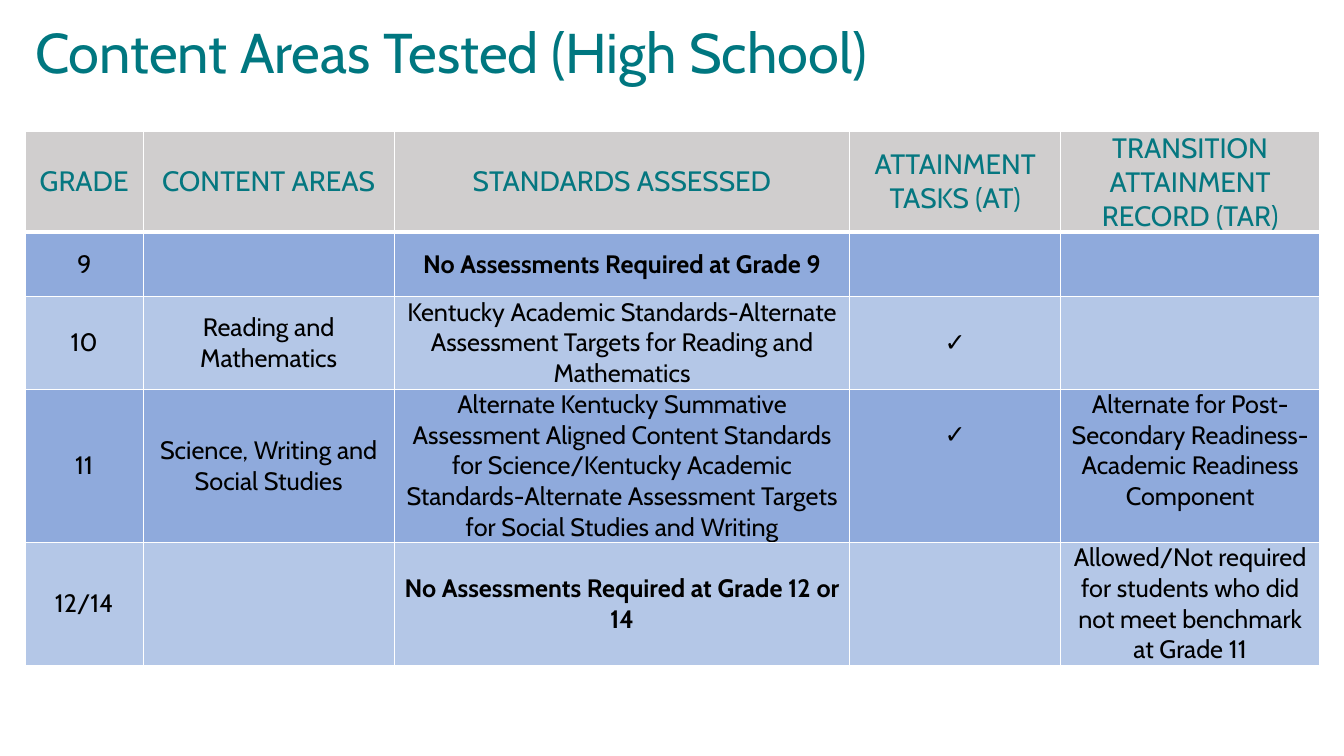
from dataclasses import dataclass

import pptx
import pptx.dml.color
import pptx.enum.text
import pptx.oxml
import pptx.oxml.ns
import pptx.util
from pptx.util import Inches

Color = pptx.dml.color.RGBColor
Anchor = pptx.enum.text.MSO_ANCHOR
Align = pptx.enum.text.PP_ALIGN


@dataclass(frozen=True)
class Theme:
    font: str = "Cabin"
    title_color: str = "007780"
    header_color: str = "057780"
    body_color: str = "000000"
    header_fill: str = "D0CECE"
    band_fills: tuple[str, str] = ("8FAADC", "B4C7E7")
    border_color: str = "FFFFFF"
    title_size: int = 40
    header_size: int = 20
    body_size: int = 18
    border_width: int = 1
    header_rule_width: int = 3


@dataclass(frozen=True)
class Entry:
    text: str = ""
    bold: bool = False
    anchor: Anchor = Anchor.MIDDLE
    top_inset: float = 0
    bottom_inset: float = 0


@dataclass(frozen=True)
class GradeRow:
    height: float
    entries: tuple[Entry, ...]


THEME = Theme()
COLUMN_WIDTHS = (1.17, 2.49, 4.52, 2.09, 2.57)
NONE = Entry()
CHECK = Entry("✓", anchor=Anchor.TOP, top_inset=0.3)

HEADER = GradeRow(1, (
    Entry("GRADE"),
    Entry("CONTENT AREAS"),
    Entry("STANDARDS ASSESSED"),
    Entry("ATTAINMENT TASKS (AT)"),
    Entry("TRANSITION ATTAINMENT RECORD (TAR)"),
))
GRADES = (
    GradeRow(0.64, (
        Entry("9"), NONE, Entry("No Assessments Required at Grade 9", bold=True), NONE, NONE,
    )),
    GradeRow(0.92, (
        Entry("10"),
        Entry("Reading and Mathematics"),
        Entry("Kentucky Academic Standards-Alternate Assessment Targets "
              "for Reading and Mathematics"),
        CHECK,
        NONE,
    )),
    GradeRow(1.52, (
        Entry("11"),
        Entry("Science, Writing and Social Studies"),
        Entry("Alternate Kentucky Summative Assessment Aligned Content Standards "
              "for Science/Kentucky Academic Standards-Alternate Assessment Targets "
              "for Social Studies and Writing"),
        CHECK,
        Entry("Alternate for Post-Secondary Readiness-Academic Readiness Component",
              bottom_inset=0.3),
    )),
    GradeRow(1.22, (
        Entry("12/14"),
        NONE,
        Entry("No Assessments Required at Grade 12 or 14", bold=True),
        NONE,
        Entry("Allowed/Not required for students who did not meet benchmark at Grade 11"),
    )),
)


def add_run(paragraph, text: str, size: int, color: str, bold: bool = False) -> None:
    run = paragraph.add_run()
    run.text = text
    run.font.name = THEME.font
    run.font.size = pptx.util.Pt(size)
    run.font.bold = bold
    run.font.color.rgb = Color.from_string(color)


def add_borders(cell, bottom_width: int) -> None:
    properties = cell._tc.get_or_add_tcPr()
    for side in "LRTB":
        points = bottom_width if side == "B" else THEME.border_width
        properties.append(pptx.oxml.parse_xml(
            f'<a:ln{side} {pptx.oxml.ns.nsdecls("a")} w="{pptx.util.Pt(points)}">'
            f'<a:solidFill><a:srgbClr val="{THEME.border_color}"/></a:solidFill>'
            f'</a:ln{side}>'))


def fill_cell(cell, entry: Entry, fill: str, size: int, color: str, rule_width: int) -> None:
    add_borders(cell, rule_width)
    cell.fill.solid()
    cell.fill.fore_color.rgb = Color.from_string(fill)
    cell.vertical_anchor = entry.anchor
    cell.margin_left = cell.margin_right = Inches(0.09)
    cell.margin_top = Inches(entry.top_inset)
    cell.margin_bottom = Inches(entry.bottom_inset)
    paragraph = cell.text_frame.paragraphs[0]
    paragraph.alignment = Align.CENTER
    if entry.text:
        add_run(paragraph, entry.text, size, color, entry.bold)


def add_title(slide, text: str) -> None:
    title = slide.shapes.add_textbox(0, Inches(-0.01), Inches(13.29), Inches(1.11))
    frame = title.text_frame
    frame.word_wrap = True
    frame.vertical_anchor = Anchor.MIDDLE
    frame.margin_left = Inches(0.35)
    paragraph = frame.paragraphs[0]
    paragraph.line_spacing = 0.9
    add_run(paragraph, text, THEME.title_size, THEME.title_color)


def add_grade_table(slide) -> None:
    rows = (HEADER, *GRADES)
    table = slide.shapes.add_table(
        len(rows), len(COLUMN_WIDTHS), Inches(0.25), Inches(1.3),
        Inches(sum(COLUMN_WIDTHS)), Inches(sum(row.height for row in rows))).table
    table.first_row = table.horz_banding = False
    for column, width in zip(table.columns, COLUMN_WIDTHS):
        column.width = Inches(width)
    for index, (table_row, row) in enumerate(zip(table.rows, rows)):
        table_row.height = Inches(row.height)
        if row is HEADER:
            style = (THEME.header_fill, THEME.header_size, THEME.header_color,
                     THEME.header_rule_width)
        else:
            style = (THEME.band_fills[(index - 1) % 2], THEME.body_size, THEME.body_color,
                     THEME.border_width)
        for cell, entry in zip(table_row.cells, row.entries):
            fill_cell(cell, entry, *style)


def main() -> None:
    presentation = pptx.Presentation()
    presentation.slide_width = Inches(13.33)
    presentation.slide_height = Inches(7.5)
    slide = presentation.slides.add_slide(presentation.slide_layouts[6])
    add_title(slide, "Content Areas Tested (High School)")
    add_grade_table(slide)
    presentation.save("out.pptx")


if __name__ == "__main__":
    main()
